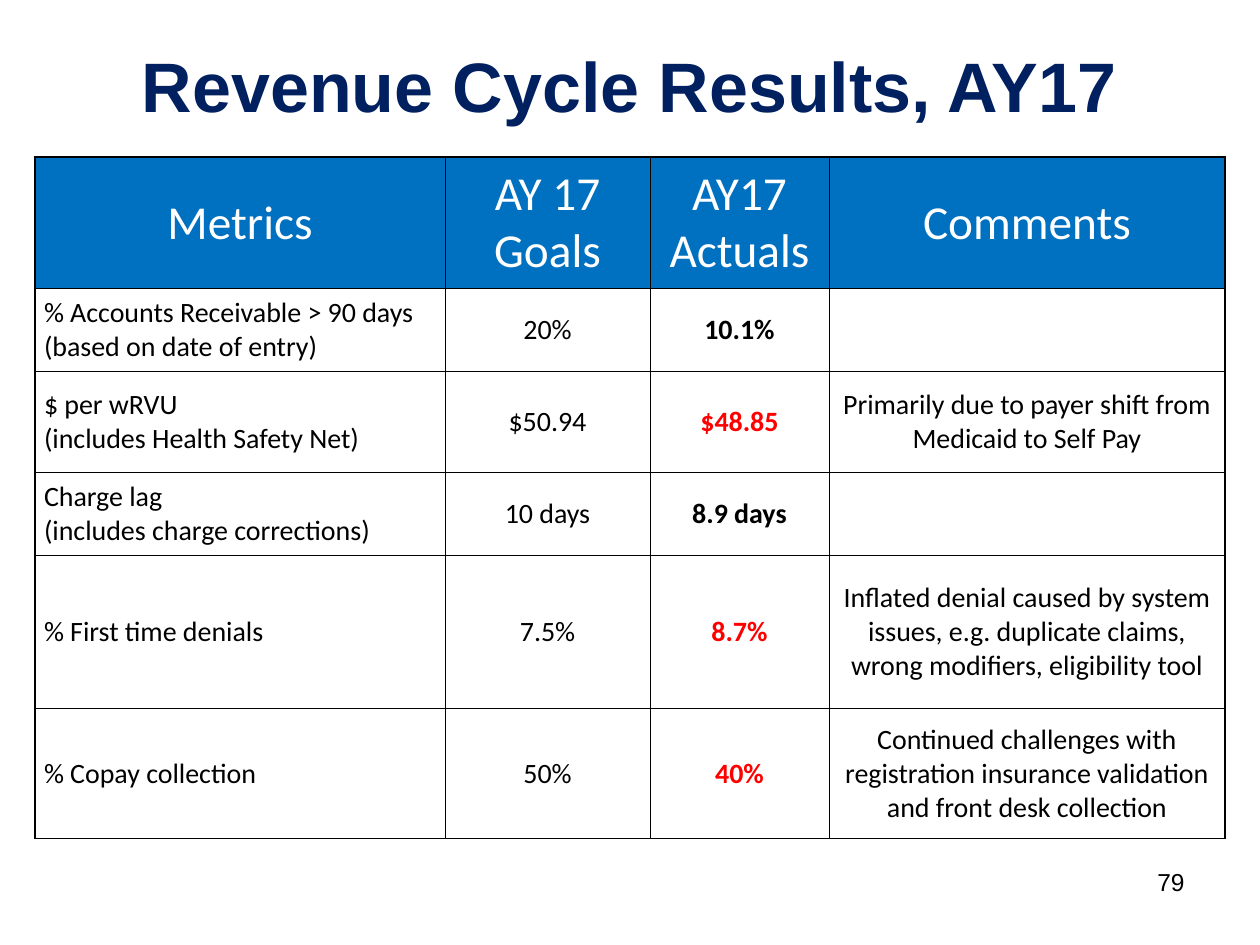
from lxml import etree
from pptx import Presentation, util as u
from pptx.dml.color import RGBColor
from pptx.enum import text
from pptx.oxml import ns

SCALE = 914400 / 126
HUES = {"navy": "002060", "blue": "0070C0", "white": "FFFFFF",
        "black": "000000", "red": "FF0000"}
COLS = [410, 205, 179, 396]
ROWS = [131, 83, 101, 83, 153, 131]
HEADS = ["Metrics", "AY 17 Goals", "AY17 Actuals", "Comments"]
RESULTS = [
    (["% Accounts Receivable > 90 days", "(based on date of entry)"],
     "20%", "10.1%", "black", ""),
    (["$ per wRVU", "(includes Health Safety Net)"],
     "$50.94", "$48.85", "red",
     "Primarily due to payer shift from Medicaid to Self Pay"),
    (["Charge lag", "(includes charge corrections)"],
     "10 days", "8.9 days", "black", ""),
    (["% First time denials"], "7.5%", "8.7%", "red",
     "Inflated denial caused by system issues, e.g. duplicate claims, "
     "wrong modifiers, eligibility tool"),
    (["% Copay collection"], "50%", "40%", "red",
     "Continued challenges with registration insurance validation "
     "and front desk collection"),
]
ALIGN = text.PP_ALIGN
MIDDLE = text.MSO_ANCHOR.MIDDLE


def px(n):
    """Turn pixels into EMU."""
    return u.Emu(round(n * SCALE))


def write(frame, lines, size, hue="black", bold=False, font="Calibri",
          align=ALIGN.CENTER):
    """Fill a text frame with one paragraph per line."""
    for i, line in enumerate(lines):
        para = frame.add_paragraph() if i else frame.paragraphs[0]
        para.alignment = align
        run = para.add_run()
        run.text = line
        run.font.size = u.Pt(size)
        run.font.name = font
        run.font.bold = bold
        run.font.color.rgb = RGBColor.from_string(HUES[hue])


def label(slide, box, line, size, hue, bold, align, anchor):
    """Add a text box in Arial."""
    frame = slide.shapes.add_textbox(*map(px, box)).text_frame
    frame.word_wrap = True
    frame.vertical_anchor = anchor
    write(frame, [line], size, hue, bold, "Arial", align)


def border(cell, row, col):
    """Rule a cell, heavier on the table's left, top and right edges."""
    edges = {"L": col == 0, "R": col == len(COLS) - 1, "T": row == 0, "B": False}
    props = cell._tc.get_or_add_tcPr()
    for side, outer in edges.items():
        line = etree.SubElement(props, ns.qn("a:ln" + side),
                                w=str(u.Pt(1 if outer else 0.5)))
        fill = etree.SubElement(line, ns.qn("a:solidFill"))
        etree.SubElement(fill, ns.qn("a:srgbClr"), val=HUES["black"])


def style(cell, row, col):
    """Set a cell's margins, borders and fill."""
    cell.margin_left = px(9 if row and not col else 1)
    cell.margin_right = cell.margin_top = px(1)
    cell.margin_bottom = 0
    cell.vertical_anchor = MIDDLE
    border(cell, row, col)
    if row:
        cell.fill.background()
    else:
        cell.fill.solid()
        cell.fill.fore_color.rgb = RGBColor.from_string(HUES["blue"])


def grid(slide):
    """Add the table of metrics."""
    shape = slide.shapes.add_table(
        len(ROWS), len(COLS), px(35), px(157), px(sum(COLS)), px(sum(ROWS)))
    table = shape.table
    for col, width in zip(table.columns, COLS):
        col.width = px(width)
    for row, height in zip(table.rows, ROWS):
        row.height = px(height)
    for r in range(len(ROWS)):
        for c in range(len(COLS)):
            style(table.cell(r, c), r, c)
    for c, head in enumerate(HEADS):
        write(table.cell(0, c).text_frame, [head], 27, "white")
    for r, (metric, goal, actual, hue, note) in enumerate(RESULTS, 1):
        frames = [table.cell(r, c).text_frame for c in range(len(COLS))]
        write(frames[0], metric, 16, align=ALIGN.LEFT)
        write(frames[1], [goal], 16)
        write(frames[2], [actual], 16, hue, True)
        if note:
            write(frames[3], [note], 16)


def main():
    """Build and save the slide."""
    deck = Presentation()
    deck.slide_width, deck.slide_height = px(1260), px(945)
    slide = deck.slides.add_slide(deck.slide_layouts[6])
    label(slide, (62, 5, 1134, 158), "Revenue Cycle Results, AY17",
          40, "navy", True, ALIGN.CENTER, MIDDLE)
    label(slide, (903, 861, 294, 66), "79",
          14, "black", False, ALIGN.RIGHT, text.MSO_ANCHOR.TOP)
    grid(slide)
    deck.save("out.pptx")


if __name__ == "__main__":
    main()
